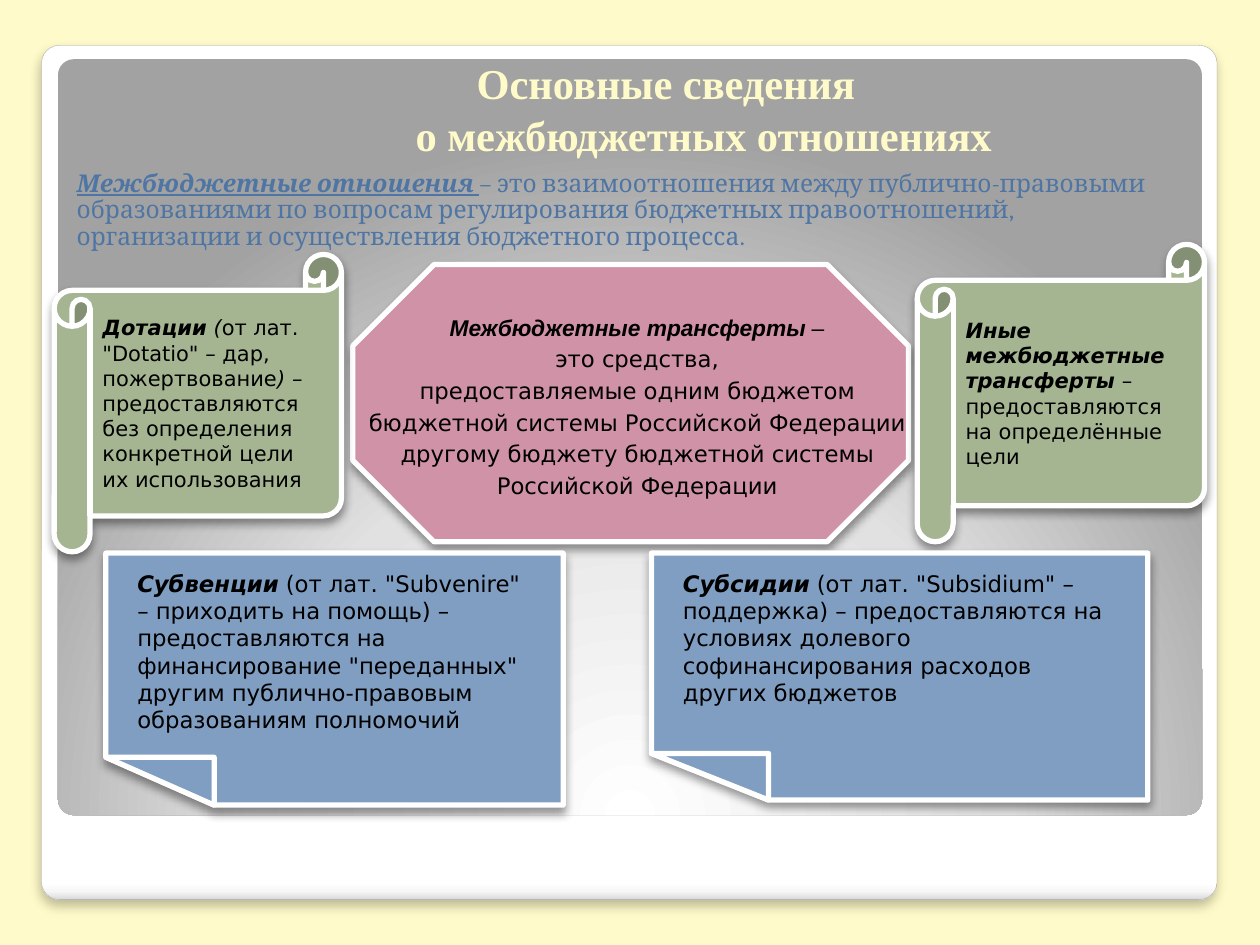
from dataclasses import dataclass

from lxml import etree
from pptx import Presentation
from pptx import util as u
from pptx.dml.color import RGBColor
from pptx.enum import shapes, text
from pptx.oxml.ns import qn

In = u.Inches
SHAPE = shapes.MSO_SHAPE
ANCHOR = text.MSO_ANCHOR
ALIGN = text.PP_ALIGN


@dataclass(frozen=True)
class Theme:
    page: str = "FEFAC9"
    white: str = "FFFFFF"
    black: str = "000000"
    card_edge: str = "A4A4A4"
    intro: str = "4E75A3"
    pink: str = "D092A7"
    green: str = "A5B592"
    blue: str = "809EC2"
    title_size: float = 24.3
    intro_size: float = 14
    body_size: float = 13
    scroll_size: float = 12
    title_font: str = "Times New Roman"
    intro_font: str = "Cambria"
    lead_font: str = "Arial"
    body_font: str = "DejaVu Sans"


T = Theme()
CARD_STOPS = [(0, "FFFFFF"), (98, "FFFFFF"), (99, "F7F7F7"), (100, "DADADA")]
PANEL_STOPS = [(0, "FFFFFF"), (55, "E1E1E1"), (100, "A2A2A2")]
BOLD_ITALIC = {"bold": True, "italic": True}


def child(parent, tag, **attrs):
    return etree.SubElement(parent, qn(tag), {k: str(v) for k, v in attrs.items()})


def set_gradient(sp, stops):
    """Replace the fill by a gradient and return its element, still without a direction."""
    sp.fill.gradient()
    grad = sp._element.spPr.find(qn("a:gradFill"))
    for old in list(grad):
        grad.remove(old)
    stop_list = child(grad, "a:gsLst")
    for pos, color in stops:
        child(child(stop_list, "a:gs", pos=pos * 1000), "a:srgbClr", val=color)
    return grad


def set_shadow(sp, alpha, blur, distance):
    """Cast a black shadow straight down; blur and distance are in points."""
    effects = sp._element.spPr.find(qn("a:effectLst"))
    shadow = child(effects, "a:outerShdw", blurRad=u.Pt(blur), dist=u.Pt(distance),
                   dir=5400000, algn="t", rotWithShape=0)
    child(child(shadow, "a:srgbClr", val=T.black), "a:alpha", val=alpha * 1000)


def style(sp, fill=None, line=None, width=3):
    sp.shadow.inherit = False
    if fill:
        sp.fill.solid()
        sp.fill.fore_color.rgb = RGBColor.from_string(fill)
    if line:
        sp.line.color.rgb = RGBColor.from_string(line)
        sp.line.width = u.Pt(width)
    else:
        sp.line.fill.background()
    return sp


def add_preset(s, kind, box, adjust=None, **look):
    sp = s.shapes.add_shape(kind, *map(In, box))
    if adjust is not None:
        sp.adjustments[0] = adjust
    return style(sp, **look)


def add_outline(s, points):
    start, *rest = [(In(x), In(y)) for x, y in points]
    builder = s.shapes.build_freeform(*start, scale=1.0)
    builder.add_line_segments(rest, close=True)
    return style(builder.convert_to_shape(), fill=T.blue, line=T.white)


def set_text(sp, paragraphs, size, font=T.body_font, color=T.black, align=ALIGN.LEFT,
             anchor=ANCHOR.TOP, insets=(0.1, 0.05, 0.1, 0.05), wrap=True,
             before=0, spacing=None, indents=None, hanging=0):
    """Write paragraphs, each a list of (text, run format) pairs."""
    tf = sp.text_frame
    tf.word_wrap = wrap
    tf.vertical_anchor = anchor
    tf.margin_left, tf.margin_top, tf.margin_right, tf.margin_bottom = map(In, insets)
    for i, runs in enumerate(paragraphs):
        p = tf.paragraphs[0] if i == 0 else tf.add_paragraph()
        p.alignment = align
        p.space_before = u.Pt(before)
        if spacing:
            p.line_spacing = spacing
        if indents:
            p._p.get_or_add_pPr().set("marL", str(In(indents[i])))
            p._p.get_or_add_pPr().set("indent", str(In(-hanging)))
        for words, look in runs:
            r = p.add_run()
            r.text = words
            r.font.size = u.Pt(size)
            r.font.name = look.get("font", font)
            r.font.color.rgb = RGBColor.from_string(color)
            r.font.bold = look.get("bold", False)
            r.font.italic = look.get("italic", False)
            r.font.underline = look.get("underline", False)


def add_backdrop(s):
    card = add_preset(s, SHAPE.ROUNDED_RECTANGLE, (0.33, 0.36, 9.33, 6.78), 0.021,
                      line=T.card_edge, width=0.16)
    child(set_gradient(card, CARD_STOPS), "a:lin", ang=5400000, scaled=0)
    set_shadow(card, 25, 6, 4)
    panel = add_preset(s, SHAPE.ROUNDED_RECTANGLE, (0.46, 0.47, 9.08, 6), 0.021)
    path = child(set_gradient(panel, PANEL_STOPS), "a:path", path="circle")
    child(path, "a:fillToRect", l=50000, t=175000, r=50000, b=-75000)


def add_title(s):
    sp = s.shapes.add_textbox(*map(In, (0, 0.84, 8.99, 0.99)))
    lines = ["Основные сведения", "о межбюджетных отношениях"]
    set_text(sp, [[(line, {"bold": True})] for line in lines], T.title_size,
             font=T.title_font, color=T.page, align=ALIGN.CENTER, anchor=ANCHOR.BOTTOM,
             insets=(0.1, 0, 0.1, 0.56), spacing=u.Pt(29.7), indents=(1.58, 2.18))


def add_intro(s):
    sp = s.shapes.add_textbox(*map(In, (0.51, 1.31, 8.9, 0.74)))
    set_text(sp, [[
        ("Межбюджетные отношения", {**BOLD_ITALIC, "underline": True}),
        (" ", {"underline": True}),
        ("– это взаимоотношения между публично-правовыми образованиями по вопросам "
         "регулирования бюджетных правоотношений, организации и осуществления "
         "бюджетного процесса.", {}),
    ]], T.intro_size, font=T.intro_font, color=T.intro, spacing=0.9)


def add_transfers(s):
    sp = add_preset(s, SHAPE.OCTAGON, (2.8, 2.1, 4.41, 2.2), 0.293,
                    fill=T.pink, line=T.white)
    set_shadow(sp, 40, 5.2, 3)
    lead = [("Межбюджетные трансферты", {**BOLD_ITALIC, "font": T.lead_font}),
            (" –", {"font": T.lead_font})]
    lines = ["это средства,", "предоставляемые одним бюджетом",
             "бюджетной системы Российской Федерации",
             "другому бюджету бюджетной системы", "Российской Федерации"]
    set_text(sp, [lead] + [[(line, {})] for line in lines], T.body_size,
             align=ALIGN.CENTER, anchor=ANCHOR.MIDDLE, insets=(0.2, 0.1, 0.1, 0.05),
             wrap=False, before=2.5, indents=[0.29] * 6, hanging=0.29)


def add_scroll(s, left, top, runs):
    sp = add_preset(s, SHAPE.HORIZONTAL_SCROLL, (left, top, 2.28, 2.36),
                    fill=T.green, line=T.white)
    set_shadow(sp, 40, 5.2, 3)
    set_text(sp, [runs], T.scroll_size, anchor=ANCHOR.MIDDLE)


def add_folded_sheet(s, left, right, bottom, fold, runs):
    """Draw a sheet with its lower left corner, fold = (width, height), turned up."""
    top = 4.39
    inner_x, fold_y = left + fold[0], bottom - fold[1]
    sheet = add_outline(s, [(left, top), (right, top), (right, bottom),
                            (inner_x, bottom), (left, fold_y)])
    set_shadow(sheet, 40, 5.2, 3)
    set_text(sheet, [runs], T.body_size, insets=(0.25, 0.13, 0.25, 0.05))
    add_outline(s, [(left, fold_y), (inner_x, fold_y), (inner_x, bottom)])


def main():
    prs = Presentation()
    prs.slide_width, prs.slide_height = In(10), In(7.5)
    s = prs.slides.add_slide(prs.slide_layouts[6])
    s.background.fill.solid()
    s.background.fill.fore_color.rgb = RGBColor.from_string(T.page)

    add_backdrop(s)
    add_title(s)
    add_transfers(s)
    add_folded_sheet(s, 0.84, 4.47, 6.39, (0.86, 0.38), [
        ("Субвенции", BOLD_ITALIC),
        (' (от лат. "Subvenire" – приходить на помощь) – предоставляются на '
         'финансирование "переданных" другим публично-правовым образованиям '
         'полномочий', {})])
    add_intro(s)
    add_scroll(s, 0.43, 2.02, [
        ("Дотации", BOLD_ITALIC), (" (", {"italic": True}),
        ('от лат. "Dotatio" – дар, пожертвование', {}), (") – ", {"italic": True}),
        ("предоставляются без определения конкретной цели их использования", {})])
    add_scroll(s, 7.28, 1.94, [
        ("Иные межбюджетные трансферты", BOLD_ITALIC),
        (" – предоставляются на определённые цели", {})])
    add_folded_sheet(s, 5.17, 9.11, 6.35, (0.93, 0.37), [
        ("Субсидии", BOLD_ITALIC),
        (' (от лат. "Subsidium" – поддержка) – предоставляются на условиях '
         'долевого софинансирования расходов других бюджетов', {})])
    prs.save("out.pptx")


if __name__ == "__main__":
    main()
